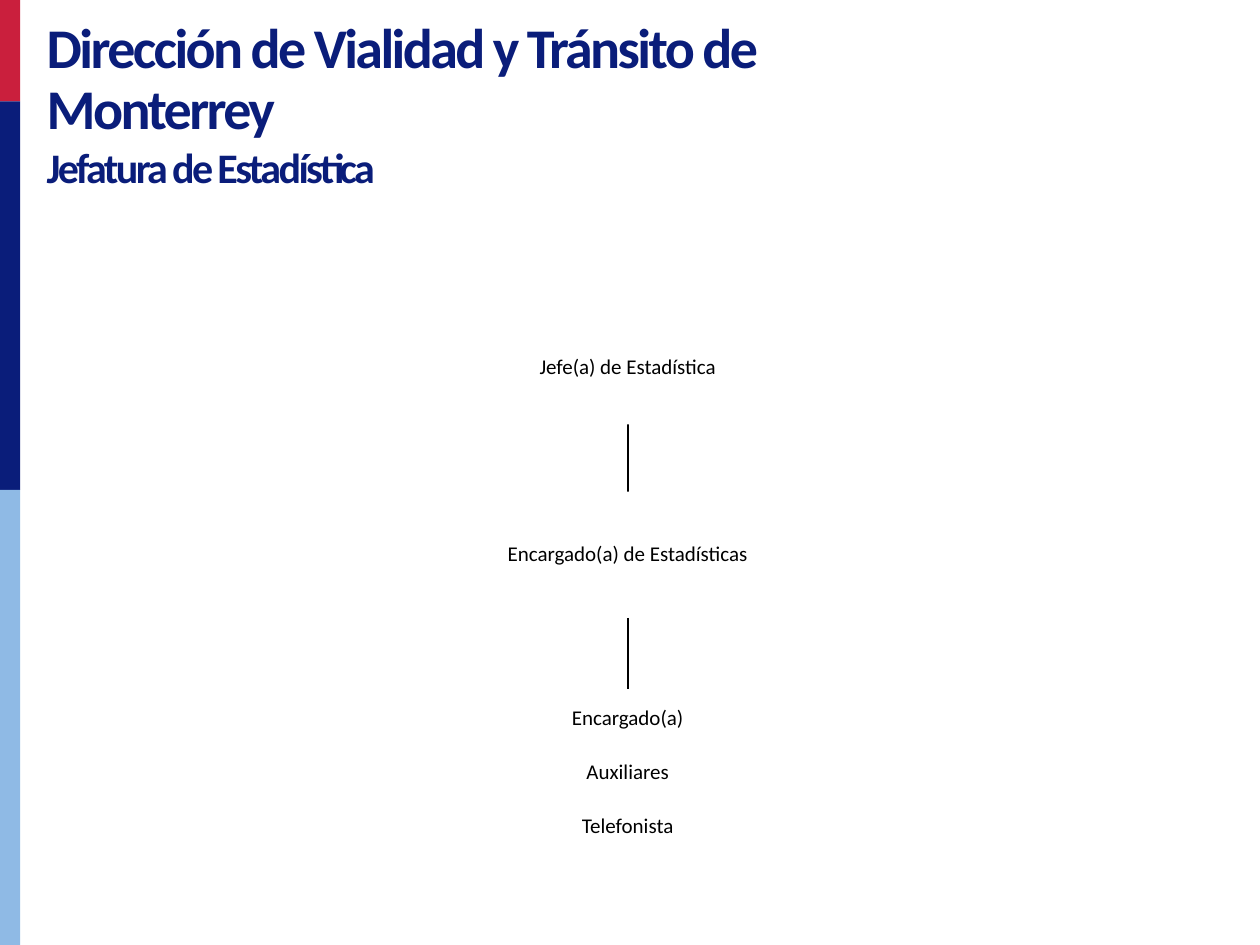
"""Builds the organisation chart slide of the statistics office."""
from dataclasses import dataclass
from itertools import pairwise

from lxml import etree
from pptx import Presentation
from pptx.dml.color import RGBColor
from pptx.enum import shapes, text
from pptx.oxml.ns import qn
from pptx.util import Pt

COLORS = {"red": "CA1F3D", "navy": "0A1D7A", "sky": "8FBAE5",
          "white": "FFFFFF", "black": "000000"}
FONT = "Calibri"
CENTER_X = 358.7
BAR_WIDTH = 11.5


@dataclass(frozen=True)
class Bar:
    top: float
    bottom: float
    color: str


@dataclass(frozen=True)
class Post:
    top: float
    width: float
    height: float
    roles: tuple[str, ...]


@dataclass(frozen=True)
class Heading:
    text: str
    size: float
    spacing: float


BARS = [Bar(0, 58, "red"), Bar(58, 280, "navy"), Bar(280, 540, "sky")]
POSTS = [
    Post(178, 170, 64.5, ("Jefe(a) de Estadística",)),
    Post(281, 166, 72, ("Encargado(a) de Estadísticas",)),
    Post(394, 161, 95, ("Encargado(a)", "Auxiliares", "Telefonista")),
]
HEADINGS = [
    Heading("Dirección de Vialidad y Tránsito de Monterrey", 32, 0.9),
    Heading("Jefatura de Estadística", 24, 1),
]


def rgb(name: str) -> RGBColor:
    return RGBColor.from_string(COLORS[name])


def set_font(p, size: float, color: str, bold: bool = False) -> None:
    p.font.name = FONT
    p.font.size = Pt(size)
    p.font.bold = bold
    p.font.color.rgb = rgb(color)


def add_rect(s, left: float, top: float, width: float, height: float, color: str):
    sp = s.shapes.add_shape(shapes.MSO_SHAPE.RECTANGLE,
                            Pt(left), Pt(top), Pt(width), Pt(height))
    sp.shadow.inherit = False
    sp.fill.solid()
    sp.fill.fore_color.rgb = rgb(color)
    sp.line.fill.background()
    return sp


def add_post(s, post: Post) -> None:
    sp = add_rect(s, CENTER_X - post.width / 2, post.top, post.width, post.height, "white")
    tf = sp.text_frame
    tf.word_wrap = True
    tf.vertical_anchor = text.MSO_ANCHOR.MIDDLE
    tf.margin_left = tf.margin_right = tf.margin_top = tf.margin_bottom = Pt(0.7)
    tf.text = "\n".join(post.roles)
    for p in tf.paragraphs:
        p.alignment = text.PP_ALIGN.CENTER
        p.line_spacing = 0.9
        set_font(p, 12, "black")
    for p in tf.paragraphs[:-1]:
        p.space_after = Pt(17.7)


def add_link(s, upper: Post, lower: Post) -> None:
    cx = s.shapes.add_connector(shapes.MSO_CONNECTOR.STRAIGHT,
                                Pt(CENTER_X), Pt(upper.top + upper.height),
                                Pt(CENTER_X), Pt(lower.top))
    cx.line.color.rgb = rgb("black")
    cx.line.width = Pt(1)
    etree.SubElement(cx._element.spPr, qn("a:effectLst"))


def set_title(s) -> None:
    sp = s.shapes.title
    sp.left, sp.top, sp.width, sp.height = Pt(19.5), Pt(8), Pt(537), Pt(106)
    tf = sp.text_frame
    tf.word_wrap = True
    tf.auto_size = text.MSO_AUTO_SIZE.SHAPE_TO_FIT_TEXT
    tf.vertical_anchor = text.MSO_ANCHOR.TOP
    tf.text = "\n".join(h.text for h in HEADINGS)
    for p, heading in zip(tf.paragraphs, HEADINGS):
        p.alignment = text.PP_ALIGN.LEFT
        p.line_spacing = heading.spacing
        set_font(p, heading.size, "navy", bold=True)
        for r in p.runs:
            r.font._element.set("spc", "-150")


def main() -> None:
    prs = Presentation()
    prs.slide_width, prs.slide_height = Pt(720), Pt(540)
    s = prs.slides.add_slide(prs.slide_layouts[5])
    for bar in BARS:
        add_rect(s, 0, bar.top, BAR_WIDTH, bar.bottom - bar.top, bar.color)
    set_title(s)
    for upper, lower in pairwise(POSTS):
        add_link(s, upper, lower)
    for post in POSTS:
        add_post(s, post)
    prs.save("out.pptx")


if __name__ == "__main__":
    main()
